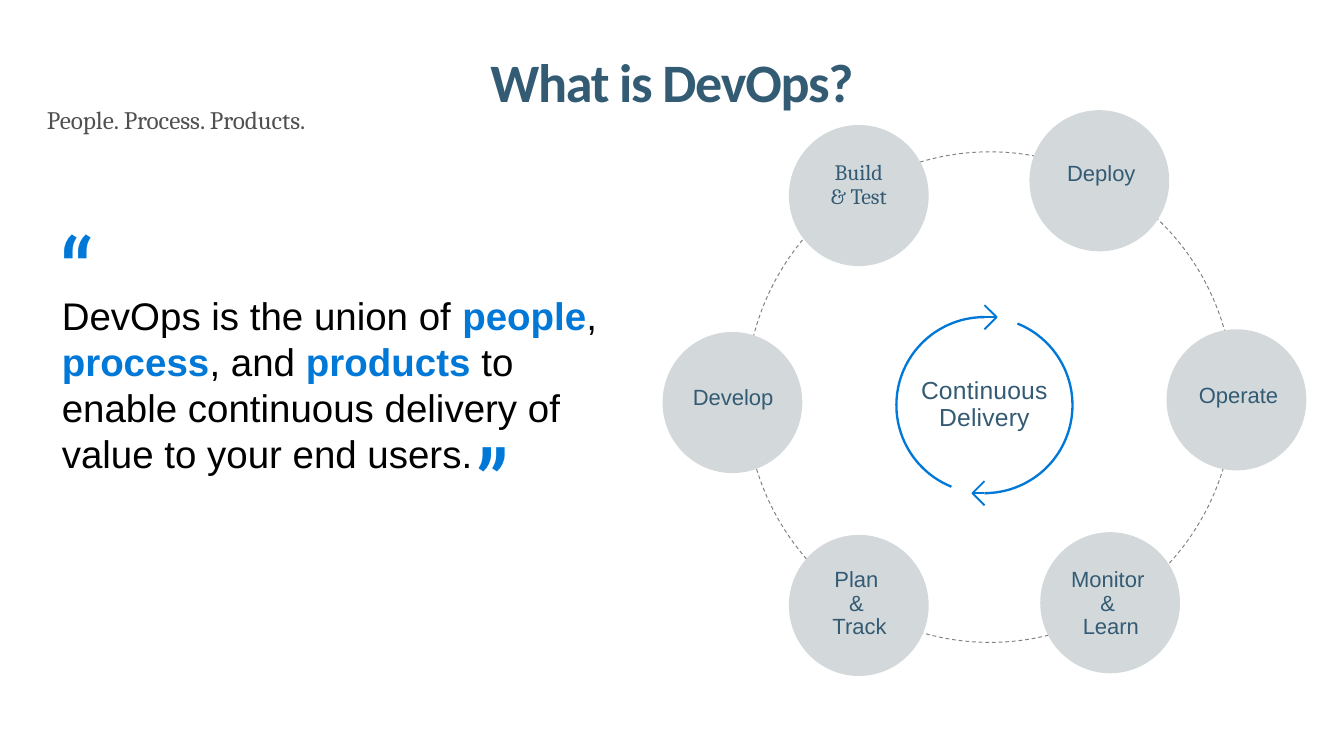
import math

from lxml import etree
from pptx import Presentation
from pptx.dml.color import RGBColor
from pptx.enum.dml import MSO_LINE
from pptx.enum.shapes import MSO_CONNECTOR, MSO_SHAPE
from pptx.enum.text import MSO_ANCHOR, PP_ALIGN
from pptx.oxml.ns import qn
from pptx.util import Inches, Pt

LEFT, CENTER = PP_ALIGN.LEFT, PP_ALIGN.CENTER
TOP, MIDDLE = MSO_ANCHOR.TOP, MSO_ANCHOR.MIDDLE
DASH = MSO_LINE.DASH
OVAL = MSO_SHAPE.OVAL
STRAIGHT = MSO_CONNECTOR.STRAIGHT

NAVY, BLUE, BLACK = "335B74", "0078D7", "000000"
GREY, DARK_GREY, DISC = "808080", "505050", "D3D8DB"
NO_INSETS = (0, 0, 0, 0)
LABEL_INSETS = (0.15, 0.12, 0.15, 0.12)


def color(value):
    return RGBColor.from_string(value)


def lengths(box):
    return [Inches(value) for value in box]


def set_frame(shape, insets, anchor=TOP, wrap=True):
    frame = shape.text_frame
    frame.word_wrap = wrap
    frame.vertical_anchor = anchor
    (frame.margin_left, frame.margin_top,
     frame.margin_right, frame.margin_bottom) = lengths(insets)
    return frame


def format_run(run, font, size, fill, bold=False, tracking=0):
    run.font.name = font
    run.font.size = Pt(size)
    run.font.bold = bold
    run.font.color.rgb = color(fill)
    if tracking:
        run._r.get_or_add_rPr().set("spc", str(round(tracking * 100)))


def write(shape, text, font, size, fill, insets=NO_INSETS, align=LEFT,
          anchor=TOP, wrap=True, spacing=1.0, bold=False, tracking=0):
    frame = set_frame(shape, insets, anchor, wrap)
    frame.text = text
    paragraph = frame.paragraphs[0]
    paragraph.alignment = align
    paragraph.line_spacing = spacing
    for run in paragraph.runs:
        format_run(run, font, size, fill, bold, tracking)


def add_text(slide, box, *args, **kwargs):
    write(slide.shapes.add_textbox(*lengths(box)), *args, **kwargs)


def add_oval(slide, box):
    oval = slide.shapes.add_shape(OVAL, *lengths(box))
    oval.shadow.inherit = False
    return oval


def add_heading(slide, box):
    left, top, width, height = box
    title = slide.shapes.title
    title.left, title.top, title.width, title.height = lengths(
        (left, top, width, 0.61))
    write(title, "What is DevOps?", "Calibri", 29, NAVY, (0, 0.18, 0, 0),
          CENTER, bold=True, tracking=-0.7)
    add_text(slide, (left, top + 0.6, width, height - 0.6),
             "People. Process. Products.", "Cambria", 13.5, DARK_GREY)


def add_quote(slide, box):
    left, top = box[:2]
    quote = slide.shapes.add_textbox(*lengths(box))
    paragraph = set_frame(quote, (0.11, 0.62, 0.15, 0.12)).paragraphs[0]
    parts = ("DevOps is the union of ", "people", ", ", "process", ", and ",
             "products",
             " to enable continuous delivery of value to your end users.")
    for index, text in enumerate(parts):
        emphasized = index % 2 == 1
        run = paragraph.add_run()
        run.text = text
        format_run(run, "Arial", 20.6, BLUE if emphasized else BLACK, emphasized)
    for mark, across, down in (("“", 0, 0), ("”", 3.1, 1.58)):
        add_text(slide, (left + across, top + down, 0.68, 0.89), mark,
                 "Roboto Slab", 47, BLUE, (0.1, 0.05, 0.1, 0.05),
                 wrap=False, tracking=-0.1)


def add_open_path(slide, points, width):
    points = [lengths(point) for point in points]
    builder = slide.shapes.build_freeform(*points[0], scale=1.0)
    builder.add_line_segments(points[1:], close=False)
    path = builder.convert_to_shape()
    path.shadow.inherit = False
    path.fill.background()
    path.line.color.rgb = color(BLUE)
    path.line.width = Pt(width)


def add_line(slide, start, end):
    line = slide.shapes.add_connector(STRAIGHT, *lengths(start + end))
    line.line.color.rgb = color(BLUE)
    line.line.width = Pt(1)
    etree.SubElement(line._element.spPr, qn("a:effectLst"))


def add_cycle(slide, box):
    """Two half-turn arrows around a label; each is the other turned by 180°."""
    left, top, size = box[:3]
    radius = size / 2
    center_x, center_y = left + radius, top + radius
    add_text(slide, (center_x - 0.68, center_y - 0.46, 1.36, 0.92),
             "Continuous\vDelivery", "Arial", 13.2, NAVY, align=CENTER,
             anchor=MIDDLE, spacing=0.9, tracking=0.1)
    for turn in (1, -1):
        def place(x, y):
            return center_x + turn * x, center_y + turn * y

        angles = [math.radians(-68 + 158 * step / 60) for step in range(61)]
        add_open_path(slide, [place(radius * math.cos(angle),
                                    radius * math.sin(angle))
                              for angle in angles], 1.25)
        add_open_path(slide, [place(0, -radius + 0.09),
                              place(0.09, -radius),
                              place(0, -radius - 0.09)], 1)
        add_line(slide, place(0, -radius), place(0.08, -radius))


def add_stage_ring(slide, box):
    left, top = box[:2]
    ring = add_oval(slide, (left + 0.62, top + 0.31, 3.63, 3.65))
    ring.fill.background()
    ring.line.color.rgb = color(GREY)
    ring.line.width = Pt(0.5)
    ring.line.dash_style = DASH

    # text, font, disc offset, label box relative to the disc, align, wrap
    centered, fitted = (CENTER, True), (LEFT, False)
    stages = (
        ("Build\v& Test", "Cambria", (0.94, 0.11), None, *centered),
        ("Deploy", "Arial", (2.73, 0), (0.13, 0.3, 0.81, 0.42), *fitted),
        ("Operate", "Arial", (3.75, 1.63), (0.09, 0.32, 0.89, 0.42), *fitted),
        ("Monitor \v& \vLearn", "Arial", (2.81, 3.14),
         (0.05, 0.15, 0.95, 0.77), *centered),
        ("Plan \v& \vTrack", "Arial", (0.94, 3.16),
         (0.05, 0.13, 0.95, 0.77), *centered),
        ("Develop", "Arial", (0, 1.65), (0.05, 0.32, 0.95, 0.42), *centered),
    )
    for text, font, (across, down), label, align, wrap in stages:
        x, y = left + across, top + down
        holder = add_oval(slide, (x, y, 1.04, 1.05))
        holder.fill.solid()
        holder.fill.fore_color.rgb = color(DISC)
        holder.line.fill.background()
        if label:
            holder = slide.shapes.add_textbox(
                *lengths((x + label[0], y + label[1], *label[2:])))
        write(holder, text, font, 11.8, NAVY, LABEL_INSETS, align,
              wrap=wrap, spacing=0.9)
    add_cycle(slide, (left + 1.74, top + 1.54, 1.31, 1.31))


def main():
    presentation = Presentation()
    presentation.slide_width = Inches(10)
    presentation.slide_height = Inches(10 * 9 / 16)
    slide = presentation.slides.add_slide(presentation.slide_layouts[5])
    add_heading(slide, (0.35, 0.18, 9.3, 0.83))
    add_quote(slide, (0.35, 1.55, 4.35, 3.19))
    add_stage_ring(slide, (4.93, 0.82, 4.79, 4.21))
    presentation.save("out.pptx")


if __name__ == "__main__":
    main()
